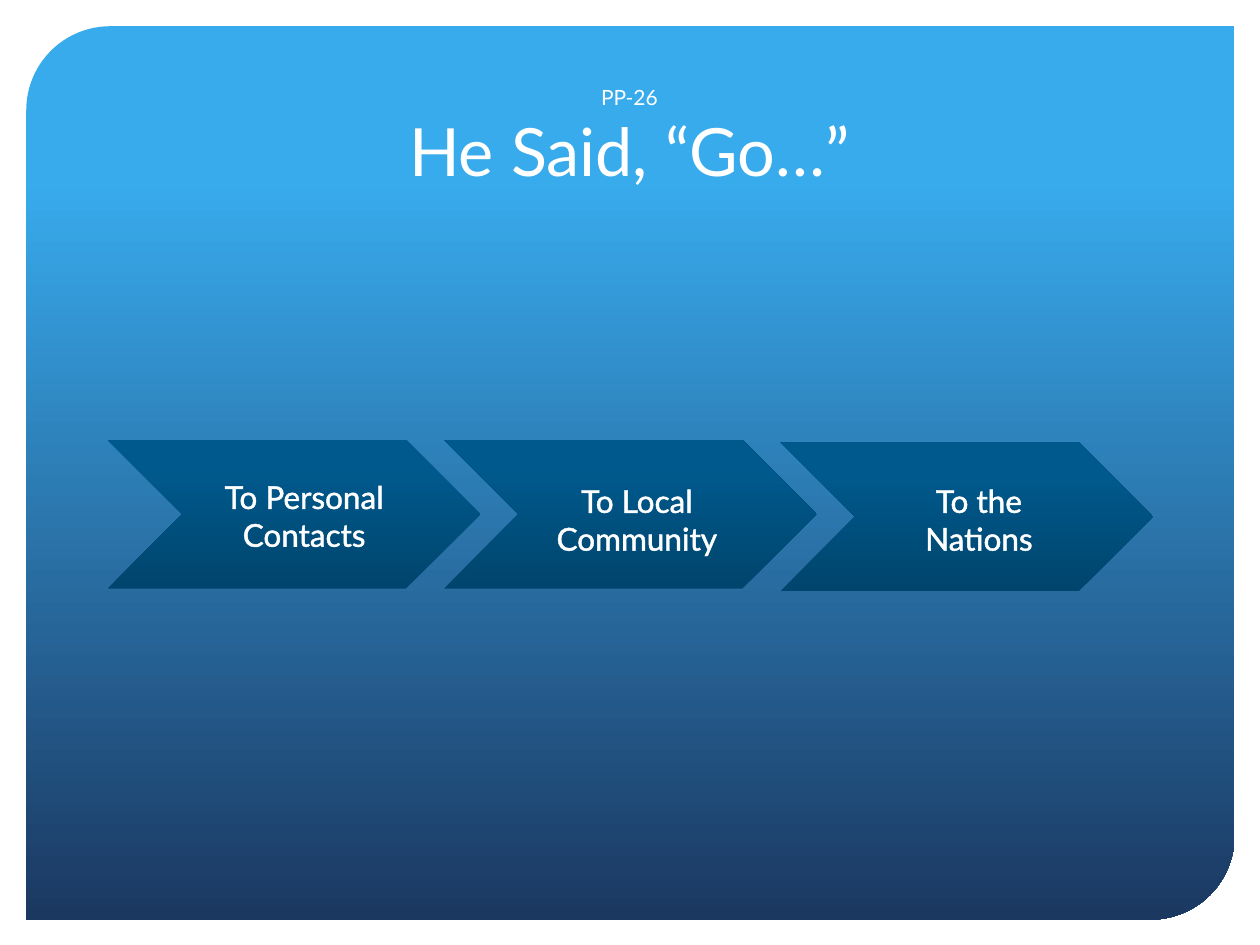
from lxml.etree import SubElement
from pptx import Presentation
from pptx.dml.color import RGBColor
from pptx.enum.shapes import MSO_SHAPE
from pptx.enum.text import MSO_ANCHOR, MSO_AUTO_SIZE, PP_ALIGN
from pptx.oxml import parse_xml
from pptx.oxml.ns import nsdecls, qn
from pptx.util import Pt

WHITE = "FFFFFF"
FRAME_STOPS = [(17, "38ABED"), (100, "1B3861")]
STEP_STOPS = [(0, "00456D"), (80, "00598D"), (100, "005A8E")]

# Each step: label, chevron top, then label left, top and width within the chevron
STEPS = [
    ("To Personal Contacts", 0, 51.8, 18, 121),
    ("To Local Community", 0, 49, 20.2, 122.4),
    ("To the Nations", 1.5, 56.9, 18.7, 113),
]


def color(hex_code):
    return RGBColor.from_string(hex_code)


def apply_format(target, values):
    for name, value in values.items():
        setattr(target, name, value)


def gradient_shape(shapes, preset, box, stops, angle):
    shape = shapes.add_shape(preset, *map(Pt, box))
    shape.shadow.inherit = False
    shape.line.fill.background()
    shape.fill.gradient()
    shape.fill.gradient_angle = 0
    gradient = shape._element.spPr.find(qn("a:gradFill"))
    stop_list = gradient.find(qn("a:gsLst"))
    for old_stop in list(stop_list):
        stop_list.remove(old_stop)
    for position, hex_code in stops:
        stop = SubElement(stop_list, qn("a:gs"), pos=str(position * 1000))
        SubElement(stop, qn("a:srgbClr"), val=hex_code)
    gradient.find(qn("a:lin")).set("ang", str(angle * 60000))
    return shape


def write_run(paragraph, text, size):
    run = paragraph.add_run()
    run.text = text
    apply_format(run.font, {"name": "Lato", "size": Pt(size)})
    run.font.color.rgb = color(WHITE)
    return run


def add_frame(slide, box):
    frame = gradient_shape(slide.shapes, MSO_SHAPE.ROUND_2_DIAG_RECTANGLE,
                           box, FRAME_STOPS, 90)
    frame.adjustments[0] = 0.094
    frame.adjustments[1] = 0


def add_title(slide, box, code, heading):
    title = slide.shapes.title
    apply_format(title, dict(zip(("left", "top", "width", "height"), map(Pt, box))))
    apply_format(title.text_frame, {"vertical_anchor": MSO_ANCHOR.BOTTOM,
                                    "auto_size": MSO_AUTO_SIZE.NONE,
                                    "word_wrap": True})
    paragraph = title.text_frame.paragraphs[0]
    paragraph.alignment = PP_ALIGN.CENTER
    write_run(paragraph, code, 12)
    paragraph.add_line_break()
    write_run(paragraph, heading, 38)
    # Bring the title in front of the frame
    slide.shapes._spTree.append(title._element)


def add_label(slide, box, text):
    label = slide.shapes.add_textbox(*map(Pt, box)).text_frame
    apply_format(label, {"word_wrap": True,
                         "auto_size": MSO_AUTO_SIZE.SHAPE_TO_FIT_TEXT})
    paragraph = label.paragraphs[0]
    paragraph.alignment = PP_ALIGN.CENTER
    run = write_run(paragraph, text, 18)
    # White outline around the letters
    outline = parse_xml(
        f'<a:ln {nsdecls("a")} w="{Pt(1.45)}"><a:solidFill>'
        f'<a:srgbClr val="{WHITE}"/></a:solidFill></a:ln>')
    run.font._element.insert(0, outline)


def add_steps(slide, box):
    left, top, width, height = box
    step_width = 213
    pitch = (width - step_width) / (len(STEPS) - 1)
    # Chevrons
    chevrons = slide.shapes.add_group_shape()
    for index, (_, drop, *_) in enumerate(STEPS):
        gradient_shape(chevrons.shapes, MSO_SHAPE.CHEVRON,
                       (left + index * pitch, top + drop, step_width, height),
                       STEP_STOPS, 270)
    # Labels over the chevrons
    for index, (text, drop, label_left, label_top, label_width) in enumerate(STEPS):
        add_label(slide, (left + index * pitch + label_left, top + drop + label_top,
                          label_width, 51), text)


def main():
    deck = Presentation()
    apply_format(deck, {"slide_width": Pt(720), "slide_height": Pt(540)})
    slide = deck.slides.add_slide(deck.slide_layouts[5])
    slide.background.fill.solid()
    slide.background.fill.fore_color.rgb = color(WHITE)
    add_frame(slide, (15, 15, 690.5, 510.5))
    add_title(slide, (61.2, 30.2, 597, 82), "PP-26", "He Said, “Go…”")
    add_steps(slide, (61.5, 251.3, 597.5, 85))
    deck.save("out.pptx")


if __name__ == "__main__":
    main()
